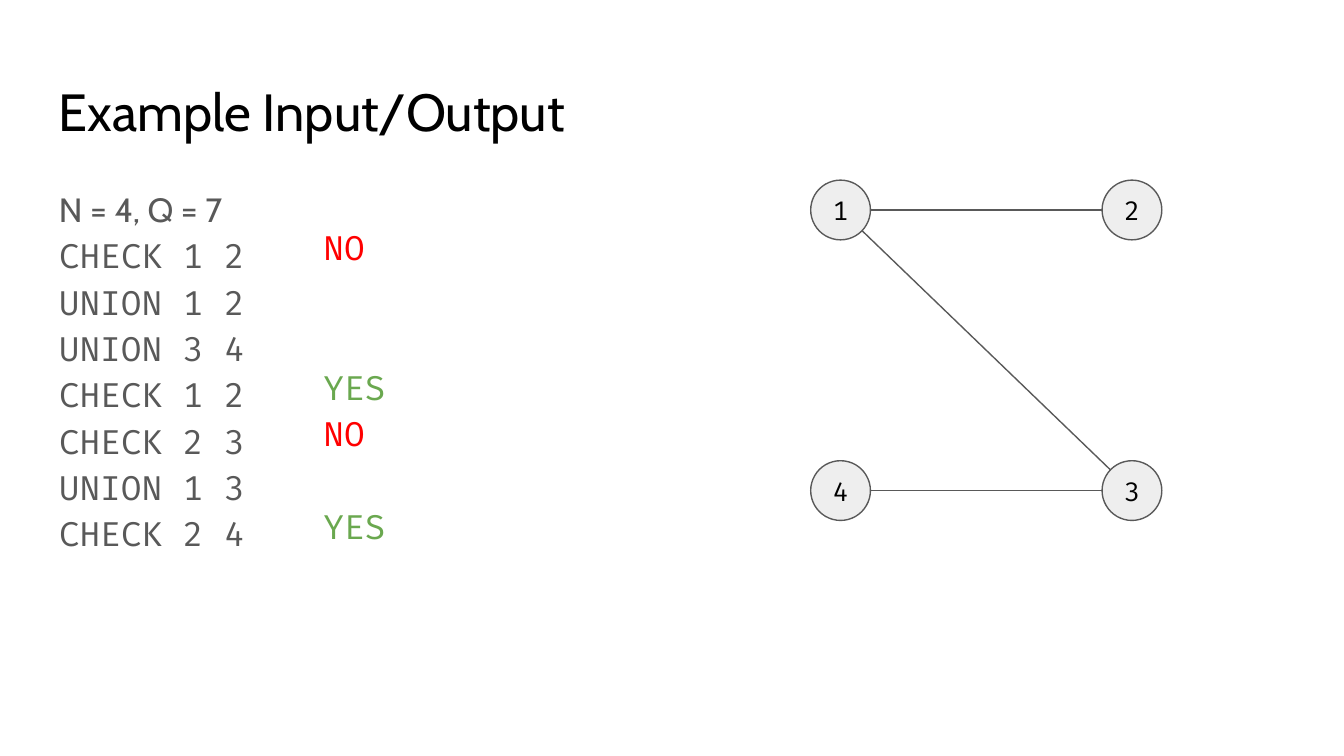
import math
from dataclasses import dataclass

import pptx
import pptx.dml.color
import pptx.enum.shapes
import pptx.enum.text
import pptx.oxml.ns
import pptx.presentation
import pptx.slide
import pptx.text.text
import pptx.util
from lxml import etree

Pt = pptx.util.Pt


@dataclass(frozen=True)
class Theme:
    sans: str = "Cabin"
    mono: str = "Fira Code"
    black: str = "000000"
    grey: str = "595959"
    node_fill: str = "EEEEEE"
    no: str = "FF0000"
    yes: str = "6AA84F"
    title_size: float = 28
    body_size: float = 18
    node_size: float = 14
    line_width: float = 0.75
    inset: float = 7.2


@dataclass(frozen=True)
class Node:
    label: str
    x: float  # centre
    y: float


@dataclass(frozen=True)
class Answer:
    text: str
    row: int  # command it replies to
    width: float
    color: str


THEME = Theme()
RADIUS = 16
LEFT_X, RIGHT_X = 450.3, 606.4
TOP_Y, BOTTOM_Y = 112.5, 262.8
ANSWER_LEFT, ANSWER_TOP, ROW_PITCH = 166.2, 114.5, 24.9

COMMANDS = ["CHECK 1 2", "UNION 1 2", "UNION 3 4", "CHECK 1 2",
            "CHECK 2 3", "UNION 1 3", "CHECK 2 4"]
ANSWERS = [Answer("NO", 0, 42.5, THEME.no), Answer("YES", 3, 49.7, THEME.yes),
           Answer("NO", 4, 42.5, THEME.no), Answer("YES", 6, 49.7, THEME.yes)]
NODES = [Node("1", LEFT_X, TOP_Y), Node("2", RIGHT_X, TOP_Y),
         Node("3", RIGHT_X, BOTTOM_Y), Node("4", LEFT_X, BOTTOM_Y)]
EDGES = [("1", "2"), ("4", "3"), ("1", "3")]


def rgb(color: str) -> pptx.dml.color.RGBColor:
    return pptx.dml.color.RGBColor.from_string(color)


def set_insets(frame: pptx.text.text.TextFrame) -> None:
    frame.margin_left = frame.margin_right = Pt(THEME.inset)
    frame.margin_top = frame.margin_bottom = Pt(THEME.inset)
    frame.word_wrap = True


def set_font(para, font: str, size: float, color: str) -> None:
    para.font.name = font
    para.font.size = Pt(size)
    para.font.color.rgb = rgb(color)


def add_text(page: pptx.slide.Slide, lines: list[tuple[str, str]], left: float, top: float,
             width: float, height: float, size: float, color: str, spacing: float = 1.0) -> None:
    """Add a text box with one paragraph for each (text, font) pair."""
    box = page.shapes.add_textbox(Pt(left), Pt(top), Pt(width), Pt(height))
    set_insets(box.text_frame)
    box.text_frame.text = "\n".join(text for text, _ in lines)
    for para, (_, font) in zip(box.text_frame.paragraphs, lines):
        para.line_spacing = spacing
        set_font(para, font, size, color)


def add_node(page: pptx.slide.Slide, node: Node) -> None:
    circle = page.shapes.add_shape(
        pptx.enum.shapes.MSO_SHAPE.OVAL, Pt(node.x - RADIUS), Pt(node.y - RADIUS),
        Pt(2 * RADIUS), Pt(2 * RADIUS))
    circle.shadow.inherit = False
    circle.fill.solid()
    circle.fill.fore_color.rgb = rgb(THEME.node_fill)
    circle.line.color.rgb = rgb(THEME.grey)
    circle.line.width = Pt(THEME.line_width)
    set_insets(circle.text_frame)
    circle.text_frame.vertical_anchor = pptx.enum.text.MSO_ANCHOR.MIDDLE
    para = circle.text_frame.paragraphs[0]
    para.text = node.label
    para.alignment = pptx.enum.text.PP_ALIGN.CENTER
    set_font(para, THEME.mono, THEME.node_size, THEME.black)


def add_edge(page: pptx.slide.Slide, start: Node, end: Node) -> None:
    """Join two nodes from rim to rim."""
    angle = math.atan2(end.y - start.y, end.x - start.x)
    dx, dy = RADIUS * math.cos(angle), RADIUS * math.sin(angle)
    edge = page.shapes.add_connector(
        pptx.enum.shapes.MSO_CONNECTOR.STRAIGHT, Pt(start.x + dx), Pt(start.y + dy),
        Pt(end.x - dx), Pt(end.y - dy))
    edge.line.color.rgb = rgb(THEME.grey)
    edge.line.width = Pt(THEME.line_width)
    etree.SubElement(edge._element.spPr, pptx.oxml.ns.qn("a:effectLst"))


def main() -> None:
    deck = pptx.Presentation()
    deck.slide_width, deck.slide_height = Pt(720), Pt(405)
    page = deck.slides.add_slide(deck.slide_layouts[6])

    # Title and input
    add_text(page, [("Example Input/Output", THEME.sans)], 24.5, 35.3, 671, 45.4,
             THEME.title_size, THEME.black)
    lines = [("N = 4, Q = 7", THEME.sans)] + [(command, THEME.mono) for command in COMMANDS]
    add_text(page, lines, 24.5, 90.7, 671, 269.3, THEME.body_size, THEME.grey, 1.15)

    # Graph nodes
    for node in NODES:
        add_node(page, node)

    # Output beside the checks
    for answer in ANSWERS:
        add_text(page, [(answer.text, THEME.mono)], ANSWER_LEFT,
                 ANSWER_TOP + answer.row * ROW_PITCH, answer.width, 31.7,
                 THEME.body_size, answer.color)

    # Graph edges
    by_label = {node.label: node for node in NODES}
    for start, end in EDGES:
        add_edge(page, by_label[start], by_label[end])

    deck.save("out.pptx")


if __name__ == "__main__":
    main()
